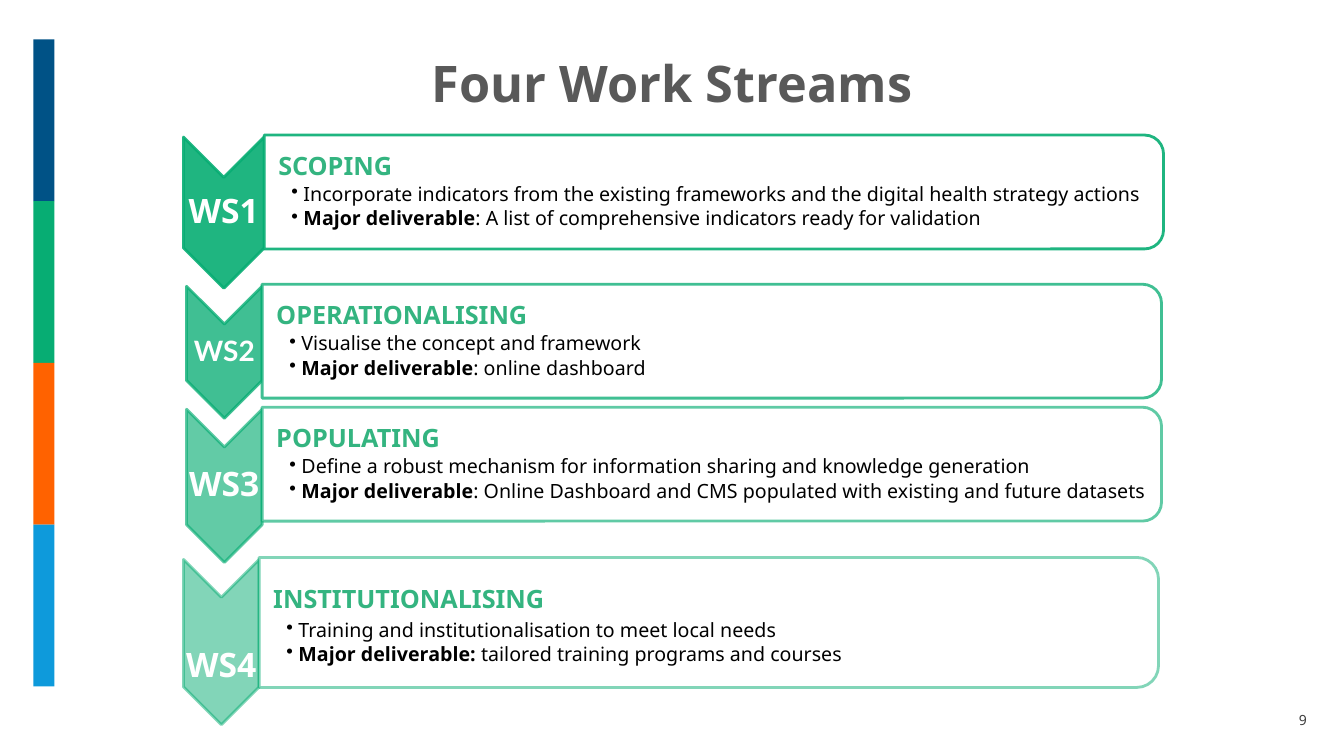
from lxml import etree
from pptx import Presentation
from pptx import util as u
from pptx.dml.color import RGBColor
from pptx.enum import shapes, text
from pptx.oxml.ns import qn

NAVY = RGBColor(0x00, 0x52, 0x86)
GREEN = RGBColor(0x07, 0xAD, 0x73)
ORANGE = RGBColor(0xFF, 0x62, 0x00)
SKY = RGBColor(0x0E, 0x9A, 0xDB)
HEADING_GREEN = RGBColor(0x34, 0xB4, 0x80)
TITLE_GREY = RGBColor(0x59, 0x59, 0x59)
NUMBER_GREY = RGBColor(0x3F, 0x3F, 0x3F)
WHITE = RGBColor(0xFF, 0xFF, 0xFF)
BLACK = RGBColor(0, 0, 0)

SANS = "Noto Sans"
LABEL_FONT = "Lato"
PANEL_WIDTH = 8.92
MIDDLE = text.MSO_ANCHOR.MIDDLE
BOTTOM = text.MSO_ANCHOR.BOTTOM
CENTER = text.PP_ALIGN.CENTER

STREAMS = [
    dict(label=("WS1", 24, SANS, MIDDLE), opacity=90,
         panel=(2.62, 1.34, 1.13), chevron=(0.8, 1.5), heading="SCOPING",
         task="Incorporate indicators from the existing frameworks and the digital health strategy actions",
         deliverable=("Major deliverable", ": A list of comprehensive indicators ready for validation")),
    dict(label=("WS2", 20, LABEL_FONT, MIDDLE), opacity=77,
         panel=(2.6, 2.82, 1.13), chevron=(0.75, 1.31), heading="OPERATIONALISING",
         task="Visualise the concept and framework",
         deliverable=("Major deliverable", ": online dashboard")),
    dict(label=("WS3", 24, SANS, MIDDLE), opacity=63,
         panel=(2.6, 4.04, 1.13), chevron=(0.75, 1.52), heading="POPULATING",
         task="Define a robust mechanism for information sharing and knowledge generation",
         deliverable=("Major deliverable", ": Online Dashboard and CMS populated with existing and future datasets")),
    dict(label=("WS4", 24, SANS, BOTTOM), opacity=50,
         panel=(2.57, 5.53, 1.29), chevron=(0.75, 1.64), heading="INSTITUTIONALISING",
         task="Training and institutionalisation to meet local needs",
         deliverable=("Major deliverable: ", "tailored training programs and courses")),
]


def set_opacity(fill_parent, percent):
    color = fill_parent.find(qn("a:solidFill"))[0]
    etree.SubElement(color, qn("a:alpha")).set("val", str(percent * 1000))


def add_block(slide, preset, box, fill):
    block = slide.shapes.add_shape(preset, *[u.Inches(v) for v in box])
    block.shadow.inherit = False
    block.fill.solid()
    block.fill.fore_color.rgb = fill
    block.line.fill.background()
    return block


def add_turned(slide, preset, box, fill, fill_opacity, line_opacity):
    left, top, width, height = box
    shift = (width - height) / 2
    turned = add_block(slide, preset, (left + shift, top - shift, height, width), fill)
    turned.rotation = 90
    turned.line.color.rgb = GREEN
    turned.line.width = u.Pt(2)
    properties = turned.element.spPr
    set_opacity(properties, fill_opacity)
    set_opacity(properties.find(qn("a:ln")), line_opacity)


def add_frame(slide, box, anchor, margins=(0.1, 0.05, 0.1, 0.05), wrap=True):
    frame = slide.shapes.add_textbox(*[u.Inches(v) for v in box]).text_frame
    frame.word_wrap = wrap
    frame.vertical_anchor = anchor
    (frame.margin_left, frame.margin_top,
     frame.margin_right, frame.margin_bottom) = [u.Inches(v) for v in margins]
    return frame


def add_run(paragraph, words, size, color, bold=False, font=SANS):
    run = paragraph.add_run()
    run.text = words
    run.font.size = u.Pt(size)
    run.font.name = font
    run.font.bold = bold
    run.font.color.rgb = color


def indent(paragraph, margin, hanging, bullet=None):
    paragraph.line_spacing = 0.9
    paragraph.space_after = u.Pt(0)
    properties = paragraph._p.get_or_add_pPr()
    properties.set("marL", str(u.Inches(margin)))
    properties.set("indent", str(-u.Inches(hanging)))
    after = properties.find(qn("a:spcAft"))
    after.remove(after[0])
    etree.SubElement(after, qn("a:spcPct")).set("val", "15000")
    if bullet:
        etree.SubElement(properties, qn("a:buChar")).set("char", bullet)
    else:
        etree.SubElement(properties, qn("a:buNone"))


def add_stripe(slide, left, top, width, height):
    colors = (NAVY, GREEN, ORANGE, SKY)
    step = height / len(colors)
    for i, color in enumerate(colors):
        add_block(slide, shapes.MSO_SHAPE.RECTANGLE, (left, top + i * step, width, step), color)


def add_title(slide, box):
    paragraph = add_frame(slide, box, MIDDLE).paragraphs[0]
    paragraph.alignment = CENTER
    add_run(paragraph, "Four Work Streams", 36, TITLE_GREY, True)


def add_page_number(slide, box):
    paragraph = add_frame(slide, box, text.MSO_ANCHOR.TOP).paragraphs[0]
    paragraph.alignment = text.PP_ALIGN.RIGHT
    add_run(paragraph, "9", 10, NUMBER_GREY)


def add_chevron(slide, box, label, opacity):
    left, top, width, height = box
    words, size, font, anchor = label
    add_turned(slide, shapes.MSO_SHAPE.CHEVRON, box, GREEN, opacity, opacity)
    notch = width / 2
    frame = add_frame(slide, (left, top + notch, width, height - width), anchor, (0.02,) * 4, False)
    paragraph = frame.paragraphs[0]
    paragraph.alignment = CENTER
    paragraph.line_spacing = 0.9
    add_run(paragraph, words, size, WHITE, True, font)


def add_panel(slide, box, stream):
    left, top, width, height = box
    add_turned(slide, shapes.MSO_SHAPE.ROUND_2_SAME_RECTANGLE, box, WHITE, 90, stream["opacity"])
    frame = add_frame(slide, (left, top + height * 0.05, width - 0.06, height * 0.9),
                      MIDDLE, (0.14, 0.01, 0.01, 0.01))
    heading = frame.paragraphs[0]
    indent(heading, 0.19, 0.19)
    add_run(heading, stream["heading"], 18, HEADING_GREEN, True)
    if stream["label"][0] == "WS4":
        add_run(heading, " ", 24, HEADING_GREEN, True)
    lead, rest = stream["deliverable"]
    for parts in ([(stream["task"], False)], [(lead, True), (rest, False)]):
        point = frame.add_paragraph()
        point.level = 1
        indent(point, 0.25, 0.12, "•")
        for words, bold in parts:
            add_run(point, words, 14, BLACK, bold)


def add_stream(slide, stream):
    left, top, height = stream["panel"]
    chevron_width, chevron_height = stream["chevron"]
    add_chevron(slide, (left - chevron_width, top + 0.02, chevron_width, chevron_height),
                stream["label"], stream["opacity"])
    add_panel(slide, (left, top, PANEL_WIDTH, height), stream)


def main():
    deck = Presentation()
    deck.slide_width, deck.slide_height = u.Inches(13.33), u.Inches(7.5)
    slide = deck.slides.add_slide(deck.slide_layouts[6])
    add_page_number(slide, (12.16, 7.01, 0.9, 0.27))
    add_stripe(slide, 0.33, 0.39, 0.21, 6.42)
    add_title(slide, (2.9, 0.43, 7.53, 0.77))
    for stream in STREAMS:
        add_stream(slide, stream)
    deck.save("out.pptx")


if __name__ == "__main__":
    main()
